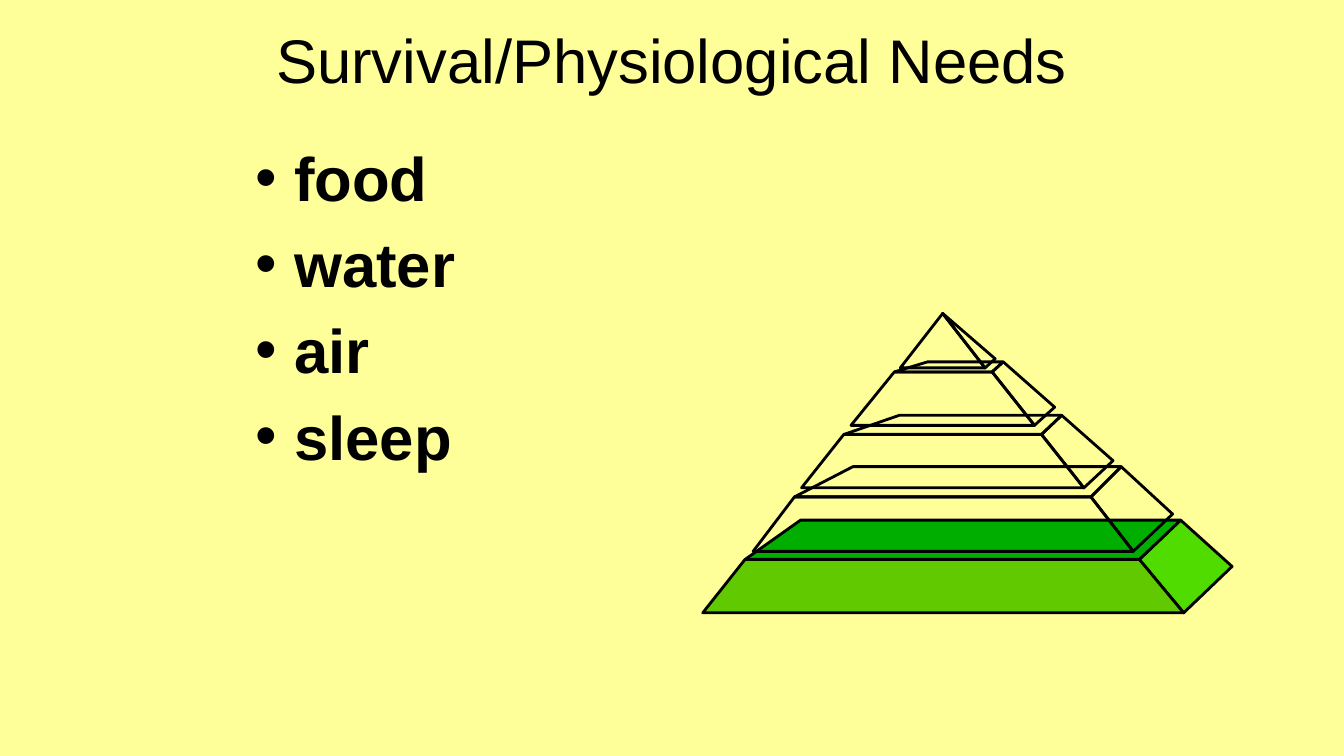
"""Build the slide on survival needs with a five-tier pyramid."""
from lxml.etree import SubElement
from pptx import Presentation
from pptx.dml.color import RGBColor
from pptx.enum.text import MSO_ANCHOR, PP_ALIGN
from pptx.oxml.ns import qn
from pptx.util import Inches, Pt

TITLE = "Survival/Physiological Needs"
NEEDS = ["food", "water", "air", "sleep"]
FONT = "Arial"
COLORS = {
    "background": "FFFF99",
    "ink": "000000",
    "side": "51DC00",
    "top": "00AE00",
    "front": "60C900",
}
CORNERS = ["front_left", "front_right", "back_right",
           "top_front_left", "top_front_right", "top_back_right", "top_back_left"]
TIERS = [
    [(6.97, 6.08), (11.74, 6.08), (12.22, 5.62),
     (7.39, 5.55), (11.3, 5.55), (11.71, 5.16), (7.94, 5.16)],
    [(7.47, 5.47), (11.24, 5.47), (11.63, 5.1),
     (7.88, 4.93), (10.82, 4.93), (11.12, 4.63), (8.46, 4.63)],
    [(7.95, 4.84), (10.75, 4.84), (11.04, 4.57),
     (8.37, 4.31), (10.33, 4.31), (10.53, 4.12), (8.92, 4.12)],
    [(8.44, 4.22), (10.26, 4.22), (10.46, 4.04),
     (8.87, 3.69), (9.84, 3.69), (9.95, 3.59), (9.2, 3.59)],
    [(8.93, 3.65), (9.77, 3.65), (9.87, 3.56)] + [(9.35, 3.11)] * 4,
]
FACES = {
    "side": ["front_right", "top_front_right", "top_back_right", "back_right"],
    "top": ["top_front_left", "top_front_right", "top_back_right", "top_back_left"],
    "front": ["front_left", "front_right", "top_front_right", "top_front_left"],
}


def color(name):
    return RGBColor.from_string(COLORS[name])


def add_box(page, left, top, width, height, anchor):
    box = page.shapes.add_textbox(Inches(left), Inches(top), Inches(width), Inches(height))
    box.text_frame.word_wrap = True
    box.text_frame.vertical_anchor = anchor
    return box.text_frame


def add_span(para, text, bold=False):
    span = para.add_run()
    span.text = text
    span.font.name = FONT
    span.font.size = Pt(44)
    span.font.bold = bold
    span.font.color.rgb = color("ink")


def add_bullet(para):
    props = para._p.get_or_add_pPr()
    props.set("marL", str(Inches(0.38)))
    props.set("indent", str(Inches(-0.38)))
    bullet_color = SubElement(props, qn("a:buClr"))
    SubElement(bullet_color, qn("a:srgbClr"), val=COLORS["ink"])
    SubElement(props, qn("a:buFont"), typeface=FONT)
    SubElement(props, qn("a:buChar"), char="•")


def add_face(page, points, fill):
    outline = [(Inches(x), Inches(y)) for x, y in points]
    builder = page.shapes.build_freeform(*outline[0])
    builder.add_line_segments(outline[1:], close=True)
    face = builder.convert_to_shape()
    face.shadow.inherit = False
    face.line.color.rgb = color("ink")
    face.line.width = Pt(2)
    if fill:
        face.fill.solid()
        face.fill.fore_color.rgb = color(fill)
    else:
        face.fill.background()


def main():
    deck = Presentation()
    deck.slide_width, deck.slide_height = Inches(13.33), Inches(7.5)
    page = deck.slides.add_slide(deck.slide_layouts[6])
    page.background.fill.solid()
    page.background.fill.fore_color.rgb = color("background")

    title = add_box(page, 1, 0, 11.33, 1.17, MSO_ANCHOR.MIDDLE).paragraphs[0]
    title.alignment = PP_ALIGN.CENTER
    add_span(title, TITLE)

    needs = add_box(page, 2.44, 1.34, 4.67, 5.17, MSO_ANCHOR.TOP)
    for index, need in enumerate(NEEDS):
        para = needs.add_paragraph() if index else needs.paragraphs[0]
        para.space_before = Pt(8.8 if index else 0)
        add_bullet(para)
        add_span(para, need, bold=True)

    for level, tier in enumerate(TIERS):
        corners = dict(zip(CORNERS, tier))
        for name, face_corners in FACES.items():
            points = list(dict.fromkeys(corners[corner] for corner in face_corners))
            if len(points) > 2:
                add_face(page, points, name if level == 0 else None)

    deck.save("out.pptx")


if __name__ == "__main__":
    main()
